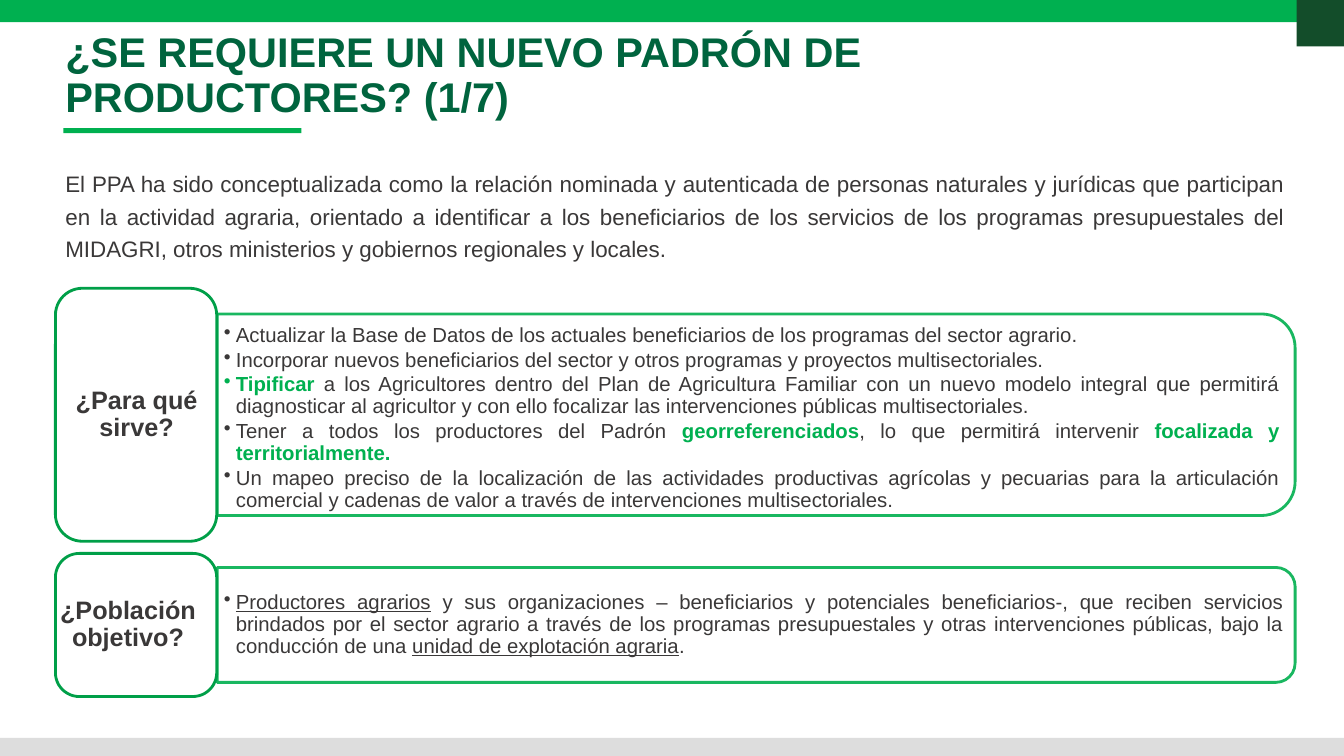
from lxml.etree import SubElement
from pptx import Presentation
from pptx.dml.color import RGBColor
from pptx.enum.shapes import MSO_SHAPE
from pptx.enum.text import MSO_ANCHOR, PP_ALIGN
from pptx.oxml.ns import qn
from pptx.util import Inches, Pt

WHITE = RGBColor(0xFF, 0xFF, 0xFF)
GREEN = RGBColor(0x00, 0xB0, 0x50)
PANEL_GREEN = RGBColor(0x00, 0xB0, 0x4F)
LABEL_GREEN = RGBColor(0x00, 0x9F, 0x48)
TITLE_GREEN = RGBColor(0x00, 0x64, 0x3E)
CORNER_GREEN = RGBColor(0x13, 0x4D, 0x2A)
FOOTER_GREY = RGBColor(0xDD, 0xDD, 0xDD)
INK = RGBColor(0x3A, 0x38, 0x38)

# Content: a paragraph is a list of (text, style) runs
TITLE = "¿SE REQUIERE UN NUEVO PADRÓN DE PRODUCTORES? (1/7)"
INTRO = (
    "El PPA ha sido conceptualizada como la relación nominada y autenticada de personas "
    "naturales y jurídicas que participan en la actividad agraria, orientado a identificar "
    "a los beneficiarios de los servicios de los programas presupuestales del MIDAGRI, "
    "otros ministerios y gobiernos regionales y locales."
)
PURPOSE = [
    [("Actualizar la Base de Datos de los actuales beneficiarios de los programas "
      "del sector agrario.", "plain")],
    [("Incorporar nuevos beneficiarios del sector y otros programas y proyectos "
      "multisectoriales.", "plain")],
    [("Tipificar", "strong"),
     (" a los Agricultores dentro del Plan de Agricultura Familiar con un nuevo modelo "
      "integral que permitirá diagnosticar al agricultor y con ello focalizar las "
      "intervenciones públicas multisectoriales.", "plain")],
    [("Tener a todos los productores del Padrón ", "plain"),
     ("georreferenciados", "strong"),
     (", lo que permitirá intervenir ", "plain"),
     ("focalizada y territorialmente.", "strong")],
    [("Un mapeo preciso de la localización de las actividades productivas agrícolas y "
      "pecuarias para la articulación comercial y cadenas de valor a través de "
      "intervenciones multisectoriales.", "plain")],
]
POPULATION = [
    [("Productores agrarios", "underlined"),
     (" y sus organizaciones – beneficiarios y potenciales beneficiarios-, que reciben "
      "servicios brindados por el sector agrario a través de los programas presupuestales "
      "y otras intervenciones públicas, bajo la conducción de una ", "plain"),
     ("unidad de explotación agraria", "underlined"),
     (".", "plain")],
]
# Each section: vertical centre, heights of label and panel, places of both texts
SECTIONS = [
    {"label": "¿Para qué sirve?", "items": PURPOSE, "center": 4.115,
     "label_height": 2.51, "panel_height": 2.0,
     "label_text": (0.63, 2.94, 1.45, 2.35), "panel_text": (2.16, 3.01, 10.59, 2.28)},
    {"label": "¿Población objetivo?", "items": POPULATION, "center": 6.2,
     "label_height": 1.42, "panel_height": 1.14,
     "label_text": (0.47, 5.56, 1.6, 1.28), "panel_text": (2.16, 5.69, 10.63, 1.02)},
]
LABEL_LEFT, LABEL_WIDTH = 0.55, 1.6
PANEL_CENTER, PANEL_WIDTH = 7.5, 10.69
CORNER = 0.167

deck = Presentation()
deck.slide_width, deck.slide_height = Inches(13.33), Inches(7.5)
slide = deck.slides.add_slide(deck.slide_layouts[6])


def add_block(kind, box, fill, line=None):
    block = slide.shapes.add_shape(kind, *map(Inches, box))
    block.shadow.inherit = False
    block.fill.solid()
    block.fill.fore_color.rgb = fill
    if line is None:
        block.line.fill.background()
    else:
        block.line.color.rgb = line
        block.line.width = Pt(2)
    return block


def make_translucent(block, percent):
    for color in block.element.spPr.iter(qn("a:srgbClr")):
        SubElement(color, qn("a:alpha"), val=str(percent * 1000))


def add_bullet(paragraph, color):
    properties = paragraph._p.get_or_add_pPr()
    properties.set("marL", str(Inches(0.12)))
    properties.set("indent", str(Inches(-0.13)))
    bullet_color = SubElement(properties, qn("a:buClr"))
    SubElement(bullet_color, qn("a:srgbClr"), val=str(color))
    SubElement(properties, qn("a:buChar"), char="•")


def add_text(box, paragraphs, *, size, color=INK, bold=False, align=PP_ALIGN.LEFT,
             anchor=MSO_ANCHOR.TOP, spacing=0.9, gap=0, bullets=False, insets=(0.1, 0.05)):
    frame = slide.shapes.add_textbox(*map(Inches, box)).text_frame
    frame.word_wrap = True
    frame.vertical_anchor = anchor
    frame.margin_left = frame.margin_right = Inches(insets[0])
    frame.margin_top = frame.margin_bottom = Inches(insets[1])
    for index, runs in enumerate(paragraphs):
        paragraph = frame.add_paragraph() if index else frame.paragraphs[0]
        paragraph.alignment = align
        paragraph.line_spacing = spacing
        if index:
            paragraph.space_before = Pt(gap)
        if bullets:
            add_bullet(paragraph, GREEN if runs[0][1] == "strong" else color)
        for text, style in runs:
            run = paragraph.add_run()
            run.text = text
            run.font.name = "Arial"
            run.font.size = Pt(size)
            run.font.bold = bold or style == "strong"
            run.font.underline = style == "underlined"
            run.font.color.rgb = GREEN if style == "strong" else color


# Page bands
for box, fill in [
    ((0, 0, 13.33, 0.22), GREEN),
    ((0, 7.32, 13.33, 0.18), FOOTER_GREY),
    ((12.86, 0, 0.47, 0.46), CORNER_GREEN),
]:
    add_block(MSO_SHAPE.RECTANGLE, box, fill)

# Introduction
add_text((0.55, 1.59, 12.29, 0.93), [[(INTRO, "plain")]], size=16,
         align=PP_ALIGN.JUSTIFY, spacing=1.2)

# Sections: a panel turned a quarter, with its label on the left
for section in SECTIONS:
    center, height = section["center"], section["panel_height"]
    panel = add_block(
        MSO_SHAPE.ROUND_2_SAME_RECTANGLE,
        (PANEL_CENTER - height / 2, center - PANEL_WIDTH / 2, height, PANEL_WIDTH),
        WHITE, PANEL_GREEN)
    panel.rotation = 90
    panel.adjustments[0] = CORNER
    make_translucent(panel, 90)
    add_text(section["panel_text"], section["items"], size=14.5, align=PP_ALIGN.JUSTIFY,
             anchor=MSO_ANCHOR.MIDDLE, gap=2.1, bullets=True, insets=(0.06, 0.03))

    height = section["label_height"]
    label = add_block(MSO_SHAPE.ROUNDED_RECTANGLE,
                      (LABEL_LEFT, center - height / 2, LABEL_WIDTH, height),
                      WHITE, LABEL_GREEN)
    label.adjustments[0] = CORNER
    add_text(section["label_text"], [[(section["label"], "plain")]], size=18, bold=True,
             align=PP_ALIGN.CENTER, anchor=MSO_ANCHOR.MIDDLE, insets=(0.07, 0.04))

# Title and its underline
add_block(MSO_SHAPE.RECTANGLE, (0.63, 1.27, 2.36, 0.05), GREEN)
add_text((0.55, 0.27, 9.28, 1), [[(TITLE, "plain")]], size=29.6, color=TITLE_GREEN, bold=True)

deck.save("out.pptx")
